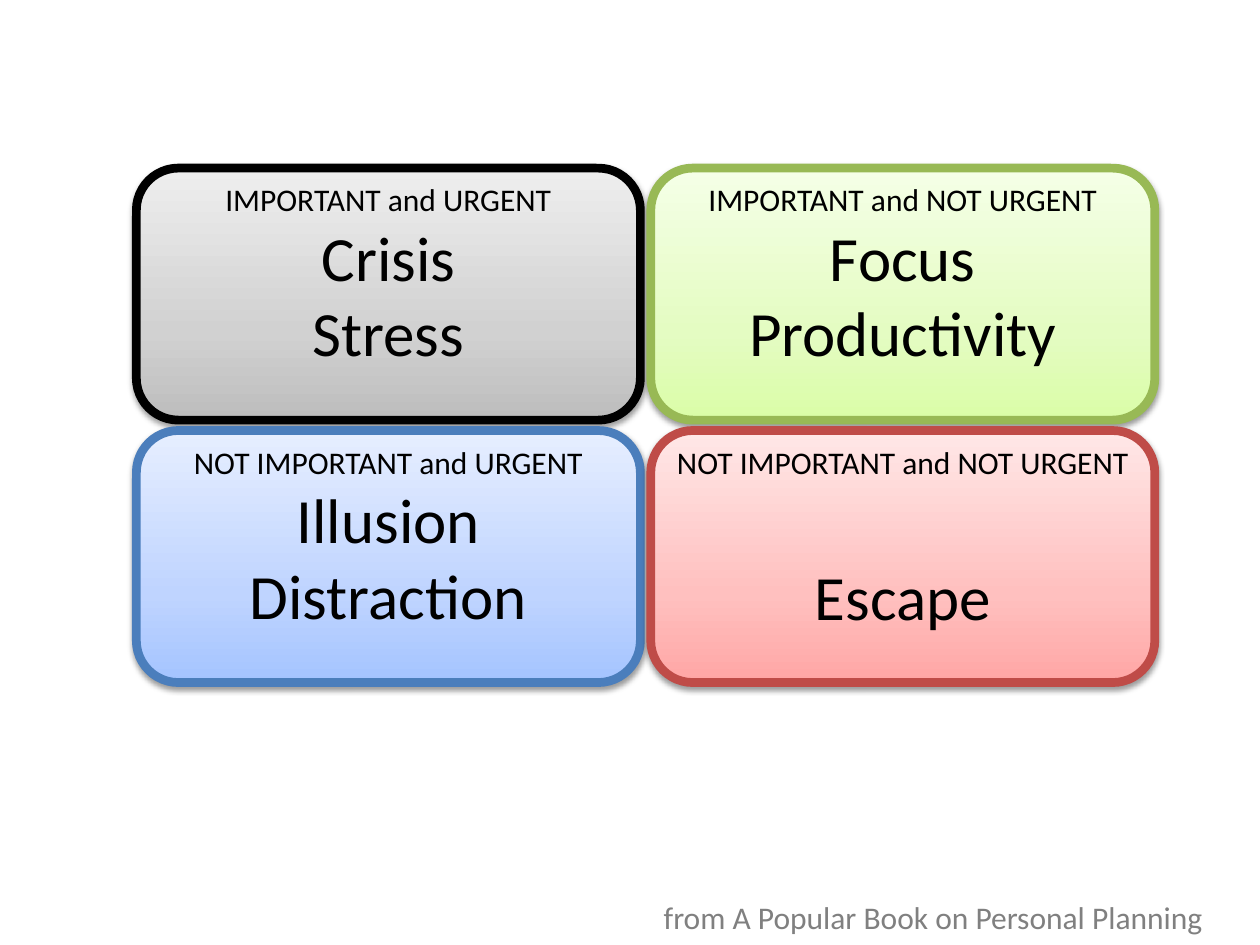
"""Build a slide with the four quadrants of importance and urgency."""
import dataclasses

import lxml.etree
import pptx
import pptx.dml.color
import pptx.enum.shapes
import pptx.enum.text
import pptx.oxml.ns
import pptx.slide
import pptx.text.text
import pptx.util

Cm = pptx.util.Cm
Pt = pptx.util.Pt
RGBColor = pptx.dml.color.RGBColor
qn = pptx.oxml.ns.qn

FONT = "Calibri"
BLACK = RGBColor(0x00, 0x00, 0x00)
GRAY = RGBColor(0x80, 0x80, 0x80)
GREEN = RGBColor(0x98, 0xB9, 0x55)
BLUE = RGBColor(0x4B, 0x7E, 0xBC)
RED = RGBColor(0xBF, 0x4C, 0x48)
GRAYS = (RGBColor(0xBD, 0xBD, 0xBD), RGBColor(0xD1, 0xD1, 0xD1), RGBColor(0xEE, 0xEE, 0xEE))
GREENS = (RGBColor(0xDA, 0xFD, 0xA7), RGBColor(0xE4, 0xFC, 0xC2), RGBColor(0xF5, 0xFF, 0xE7))
BLUES = (RGBColor(0xA4, 0xC4, 0xFF), RGBColor(0xBF, 0xD4, 0xFF), RGBColor(0xE6, 0xEE, 0xFF))
REDS = (RGBColor(0xFF, 0xA6, 0xA5), RGBColor(0xFF, 0xC0, 0xBF), RGBColor(0xFF, 0xE7, 0xE7))
STOPS = (0, 35, 100)

LEFT, TOP = Cm(2.75), Cm(3.39)
WIDTH, HEIGHT = Cm(10.16), Cm(5.08)
GAP = Cm(0.21)


@dataclasses.dataclass
class Quadrant:
    """One box of the matrix."""
    head: str
    words: tuple[str, ...]
    line: RGBColor
    shades: tuple[RGBColor, ...]
    lead: int = 0


QUADRANTS = (
    Quadrant("IMPORTANT and URGENT", ("Crisis", "Stress"), BLACK, GRAYS),
    Quadrant("IMPORTANT and NOT URGENT", ("Focus", "Productivity"), GREEN, GREENS),
    Quadrant("NOT IMPORTANT and URGENT", ("Illusion", "Distraction"), BLUE, BLUES),
    Quadrant("NOT IMPORTANT and NOT URGENT", ("Escape",), RED, REDS, 44),
)


def style(para: pptx.text.text._Paragraph, size: int, color: RGBColor) -> None:
    """Format the runs of a paragraph."""
    for run in para.runs:
        run.font.name = FONT
        run.font.size = Pt(size)
        run.font.color.rgb = color


def add_color(parent: lxml.etree._Element, color: RGBColor) -> lxml.etree._Element:
    """Append a plain colour to an XML element."""
    return lxml.etree.SubElement(parent, qn("a:srgbClr"), val=str(color))


def shade(shape: pptx.shapes.autoshape.Shape, colors: tuple[RGBColor, ...]) -> None:
    """Fill a shape with a gradient that rises from its bottom."""
    shape.fill.gradient()
    shape.fill.gradient_angle = 90
    stops = shape._element.spPr.find(qn("a:gradFill")).find(qn("a:gsLst"))
    for stop in list(stops):
        stops.remove(stop)
    for pos, color in zip(STOPS, colors):
        add_color(lxml.etree.SubElement(stops, qn("a:gs"), pos=str(pos * 1000)), color)


def drop_shadow(shape: pptx.shapes.autoshape.Shape) -> None:
    """Cast a soft shadow below a shape."""
    shape.shadow.inherit = False
    effects = shape._element.spPr.find(qn("a:effectLst"))
    outer = lxml.etree.SubElement(
        effects, qn("a:outerShdw"), blurRad=str(Pt(3.1)), dist=str(Pt(1.6)),
        dir="5400000", rotWithShape="0")
    lxml.etree.SubElement(add_color(outer, BLACK), qn("a:alpha"), val="38000")


def add_box(slide: pptx.slide.Slide, quad: Quadrant, row: int, col: int) -> None:
    """Draw one quadrant at its place in the grid."""
    box = slide.shapes.add_shape(
        pptx.enum.shapes.MSO_SHAPE.ROUNDED_RECTANGLE,
        LEFT + col * (WIDTH + GAP), TOP + row * (HEIGHT + GAP), WIDTH, HEIGHT)
    shade(box, quad.shades)
    box.line.color.rgb = quad.line
    box.line.width = Pt(5)
    drop_shadow(box)
    frame = box.text_frame
    frame.word_wrap = True
    frame.margin_top = 0
    frame.vertical_anchor = pptx.enum.text.MSO_ANCHOR.TOP
    frame.text = "\n".join((quad.head, *quad.words))
    for index, para in enumerate(frame.paragraphs):
        para.alignment = pptx.enum.text.PP_ALIGN.CENTER
        style(para, 36 if index else 18, BLACK)
    frame.paragraphs[1].space_before = Pt(quad.lead)


def add_source(slide: pptx.slide.Slide) -> None:
    """Write the source line at the bottom right."""
    box = slide.shapes.add_textbox(Cm(13.13), Cm(17.98), Cm(12.12), Cm(1.02))
    frame = box.text_frame
    frame.word_wrap = False
    frame.auto_size = pptx.enum.text.MSO_AUTO_SIZE.SHAPE_TO_FIT_TEXT
    frame.text = "from A Popular Book on Personal Planning"
    style(frame.paragraphs[0], 18, GRAY)


def main() -> None:
    """Build and save the slide."""
    deck = pptx.Presentation()
    deck.slide_width, deck.slide_height = Cm(25.4), Cm(19.05)
    slide = deck.slides.add_slide(deck.slide_layouts[6])
    for index, quad in enumerate(QUADRANTS):
        add_box(slide, quad, *divmod(index, 2))
    add_source(slide)
    deck.save("out.pptx")


if __name__ == "__main__":
    main()
